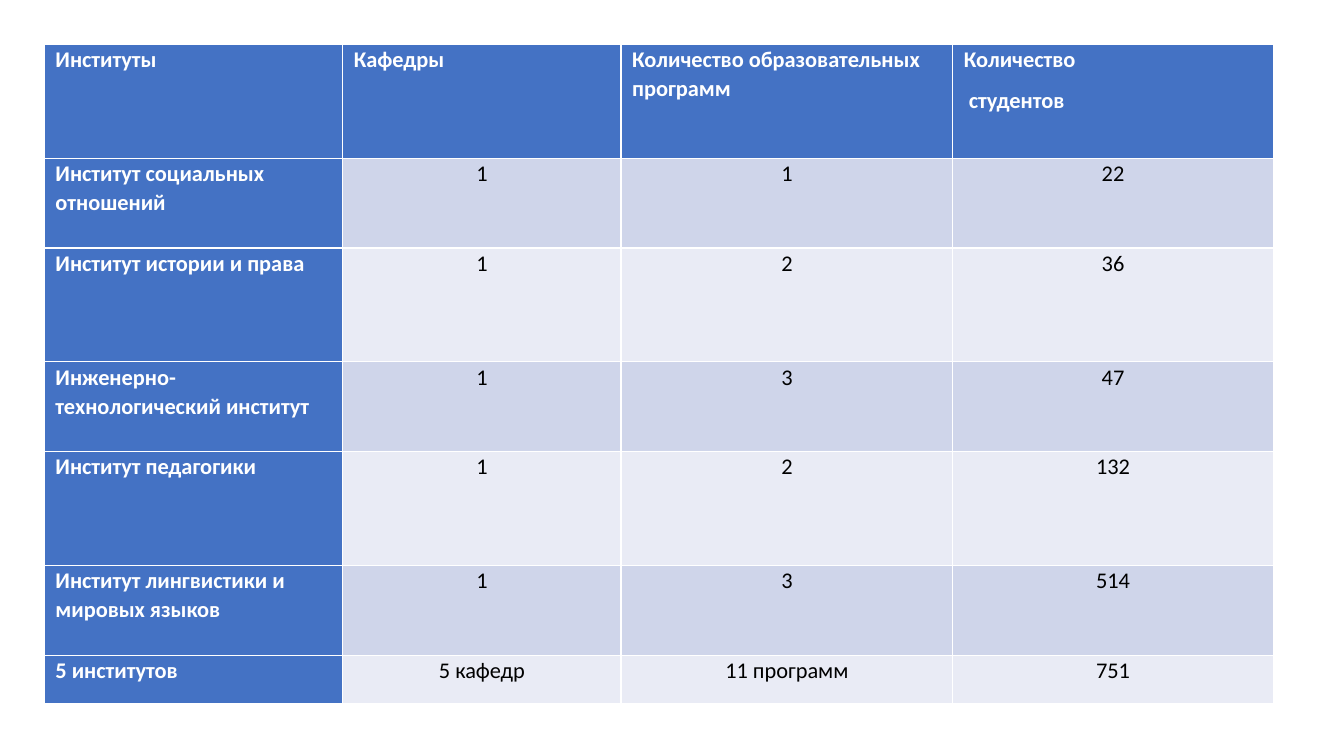
from dataclasses import dataclass

from pptx import Presentation
from pptx.dml.color import RGBColor as RGB
from pptx.enum.text import PP_ALIGN as Align
from pptx.util import Inches, Pt


@dataclass(frozen=True)
class Theme:
    font: str = "Calibri"
    size: float = 16
    heading_fill: str = "4472C4"
    heading_text: str = "FFFFFF"
    body_text: str = "000000"
    bands: tuple = ("CFD5EA", "E9EBF5")


theme = Theme()
MARGIN = 0.44
COLUMN_WIDTHS = (2.96, 2.76, 3.29, 3.18)
TALL, MEDIUM, LOW = 1.13, 0.89, 0.48
ROW_HEIGHTS = (TALL, MEDIUM, TALL, MEDIUM, TALL, MEDIUM, LOW)

institutes = (
    ("Институты", "Кафедры", "Количество образовательных программ",
     "Количество\n студентов"),
    ("Институт социальных отношений", "1", "1", "22"),
    ("Институт истории и права", "1", "2", "36"),
    ("Инженерно-технологический институт", "1", "3", "47"),
    ("Институт педагогики", "1", "2", "132"),
    ("Институт лингвистики и мировых языков", "1", "3", "514"),
    ("5 институтов", "5 кафедр", "11 программ", "751"),
)

deck = Presentation()
deck.slide_width, deck.slide_height = Inches(13.33), Inches(7.5)
blank_layout = deck.slide_layouts[6]
slide = deck.slides.add_slide(blank_layout)

# The default table style supplies the white rules between the cells.
summary = slide.shapes.add_table(
    len(ROW_HEIGHTS), len(COLUMN_WIDTHS), Inches(MARGIN), Inches(MARGIN),
    Inches(sum(COLUMN_WIDTHS)), Inches(sum(ROW_HEIGHTS))).table
summary.first_col = True
for column, width in zip(summary.columns, COLUMN_WIDTHS):
    column.width = Inches(width)
for row, height in zip(summary.rows, ROW_HEIGHTS):
    row.height = Inches(height)

for r, record in enumerate(institutes):
    for c, entry in enumerate(record):
        is_heading = r == 0 or c == 0
        cell = summary.cell(r, c)
        cell.margin_left = cell.margin_right = Inches(0.11)
        cell.margin_top = cell.margin_bottom = 0
        cell.fill.solid()
        cell.fill.fore_color.rgb = RGB.from_string(
            theme.heading_fill if is_heading else theme.bands[(r - 1) % 2])
        cell.text_frame.text = entry
        for paragraph in cell.text_frame.paragraphs:
            paragraph.alignment = Align.LEFT if is_heading else Align.CENTER
            paragraph.line_spacing = 1.07
            paragraph.space_after = Pt(8)
            for run in paragraph.runs:
                run.font.name = theme.font
                run.font.size = Pt(theme.size)
                run.font.bold = is_heading
                run.font.color.rgb = RGB.from_string(
                    theme.heading_text if is_heading else theme.body_text)

deck.save("out.pptx")
